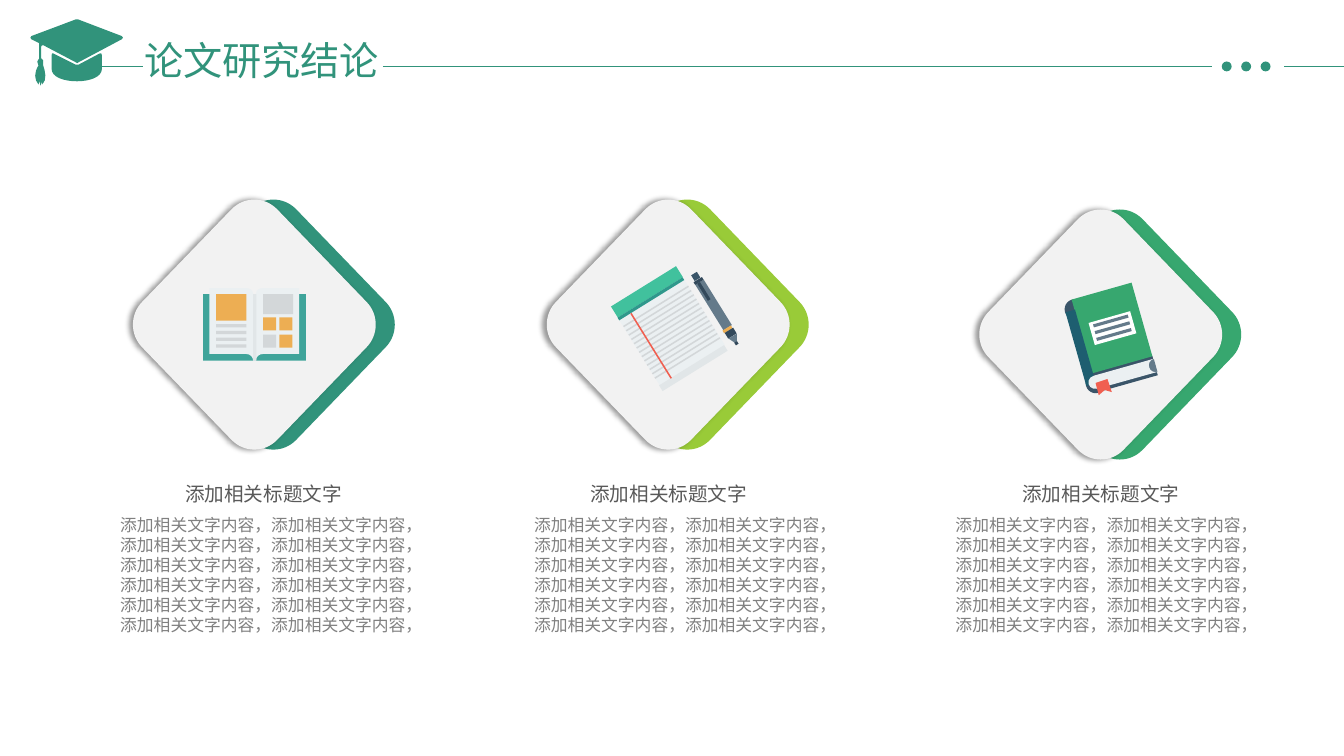
from lxml import etree
from pptx import Presentation
from pptx import util as u
from pptx.dml.color import RGBColor
from pptx.enum import shapes as kinds, text
from pptx.oxml.ns import qn

GREEN = "31937B"
PAPER, RULE, GOLD, SLATE, NAVY, RED = "EBF0F2", "D3D7D9", "EDAE53", "647A8A", "33495B", "F05F50"
BODY_LINE = "添加相关文字内容，添加相关文字内容，"


def colour(value):
    return RGBColor.from_string(value)


def paint(shape, fill):
    shape.shadow.inherit = False
    shape.fill.solid()
    shape.fill.fore_color.rgb = colour(fill)
    shape.line.fill.background()
    return shape


def add_block(shapes, box, fill, rotation=0, kind=kinds.MSO_SHAPE.RECTANGLE):
    shape = paint(shapes.add_shape(kind, *map(u.Cm, box)), fill)
    shape.rotation = rotation


def add_disc(shapes, left, top, size, fill, rotation=0):
    add_block(shapes, (left, top, size, size), fill, rotation, kinds.MSO_SHAPE.OVAL)


def bend_segments(shape, steps):
    """Turn the straight segment of each six-number step into a cubic Bezier."""
    outline = shape._element.spPr.find(".//" + qn("a:path"))
    segments = [node for node in outline if node.tag != qn("a:close")]
    for segment, step in zip(segments, steps):
        if len(step) == 6:
            segment.tag = qn("a:cubicBezTo")
            for position, (x, y) in enumerate((step[:2], step[2:4])):
                point = etree.Element(qn("a:pt"), x=str(u.Cm(x) - shape.left),
                                      y=str(u.Cm(y) - shape.top))
                segment.insert(position, point)


def add_outline(shapes, fill, *contours):
    """Draw closed contours; a step of two numbers is a point, of six a curve."""
    builder = None
    for contour in contours:
        first, *rest = [(u.Cm(step[-2]), u.Cm(step[-1])) for step in contour]
        if builder is None:
            builder = shapes.build_freeform(*first)
        else:
            builder.move_to(*first)
        builder.add_line_segments(rest, close=True)
    shape = paint(builder.convert_to_shape(), fill)
    bend_segments(shape, [step for contour in contours for step in contour])
    return shape


def add_left_shadow(shape):
    effects = shape._element.spPr.find(qn("a:effectLst"))
    shadow = etree.SubElement(effects, qn("a:outerShdw"), blurRad=str(u.Pt(4)),
                              dist=str(u.Pt(3)), dir="10800000", algn="r", rotWithShape="0")
    black = etree.SubElement(shadow, qn("a:srgbClr"), val="000000")
    etree.SubElement(black, qn("a:alpha"), val="40000")


def add_diamond(shapes, x, y, fill):
    steps = [
        (0, -3.15), (0.21, -3.15, 0.41, -3.07, 0.57, -2.91),
        (2.82, -0.58), (2.98, -0.42, 3.06, -0.21, 3.06, 0),
        (3.06, 0.21, 2.98, 0.42, 2.82, 0.58),
        (0.57, 2.91), (0.41, 3.07, 0.21, 3.15, 0, 3.15),
        (-0.21, 3.15, -0.41, 3.07, -0.57, 2.91),
        (-2.82, 0.58), (-2.98, 0.42, -3.06, 0.21, -3.06, 0),
        (-3.06, -0.21, -2.98, -0.42, -2.82, -0.58),
        (-0.57, -2.91), (-0.41, -3.07, -0.21, -3.15, 0, -3.15),
    ]
    moved = [tuple(n + (y if i % 2 else x) for i, n in enumerate(step)) for step in steps]
    return add_outline(shapes, fill, moved)


def add_text(shapes, box, lines, size, font, fill, centred=False, spacing=None, inset=0):
    frame = shapes.add_textbox(*map(u.Cm, box)).text_frame
    frame.word_wrap = False
    frame.auto_size = text.MSO_AUTO_SIZE.SHAPE_TO_FIT_TEXT
    frame.margin_left = frame.margin_right = u.Cm(inset)
    frame.margin_top = frame.margin_bottom = u.Cm(inset / 2)
    frame.text = "\n".join(lines)
    for paragraph in frame.paragraphs:
        paragraph.font.size = u.Pt(size)
        paragraph.font.name = font
        paragraph.font.color.rgb = colour(fill)
        if centred:
            paragraph.alignment = text.PP_ALIGN.CENTER
        if spacing:
            paragraph.line_spacing = spacing


def add_line(shapes, start, end, y):
    line = shapes.add_connector(kinds.MSO_CONNECTOR.STRAIGHT, *map(u.Cm, (start, y, end, y)))
    line.line.color.rgb = colour(GREEN)
    line.line.width = u.Pt(0.5)
    etree.SubElement(line._element.spPr, qn("a:effectLst"))


def draw_open_book(shapes):
    add_block(shapes, (5.12, 7.41, 2.59, 1.68), "3FA49A")
    add_outline(shapes, PAPER, [
        (6.63, 7.26), (6.53, 7.26, 6.45, 7.31, 6.45, 7.42), (6.38, 7.42),
        (6.38, 7.31, 6.3, 7.26, 6.2, 7.26), (5.28, 7.26), (5.28, 8.92),
        (7.54, 8.92), (7.54, 7.26)])
    add_outline(shapes, PAPER, [
        (6.63, 8.92), (6.2, 8.92), (6.3, 8.92, 6.38, 8.99, 6.38, 9.09),
        (6.45, 9.09), (6.45, 8.99, 6.53, 8.92, 6.63, 8.92)])
    for index, fill in enumerate((GOLD, GOLD, RULE, GOLD)):
        row, column = divmod(index, 2)
        add_block(shapes, (6.63 + 0.41 * column, 8 + 0.43 * row, 0.33, 0.33), fill)
    for row in range(4):
        add_block(shapes, (5.45, 8.17 + 0.17 * row, 0.76, 0.08), RULE)
    add_block(shapes, (6.63, 7.41, 0.76, 0.51), RULE)
    add_block(shapes, (5.45, 7.41, 0.76, 0.67), GOLD)
    add_block(shapes, (6.38, 7.41, 0.08, 1.68), "E1E6E8")


def draw_notepad(shapes):
    tilt = 328.2
    sheet = [
        ((15.95, 7.34, 1.93, 2.01), PAPER), ((16.51, 9.19, 1.93, 0.17), "E1E6E8"),
        ((15.34, 7.19, 1.93, 0.33), "41C19D"), ((15.44, 7.49, 1.93, 0.08), "2F988C"),
    ]
    rules = [((15.57 + 0.79 * i / 12, 7.7 + 1.3 * i / 12, 1.93, 0.04), RULE) for i in range(13)]
    pen = [
        ((16.39, 7.75, 0.04, 1.93), RED), ((17.86, 7.01, 0.25, 1.35), SLATE),
        ((17.48, 7.04, 0.25, 0.08), NAVY), ((17.45, 6.88, 0.17, 0.17), "3A5569"),
        ((18.21, 8.26, 0.25, 0.08), GOLD), ((18.29, 8.31, 0.25, 0.17), NAVY),
    ]
    for box, fill in sheet + rules + pen:
        add_block(shapes, box, fill, tilt)
    add_outline(shapes, SLATE, [(18.57, 8.59), (18.52, 8.64), (18.36, 8.53), (18.57, 8.41)])
    add_block(shapes, (18.52, 8.61, 0.08, 0.08), NAVY, tilt)
    add_block(shapes, (17.7, 7.09, 0.08, 0.51), NAVY, tilt)


def draw_closed_book(shapes):
    tilt = 344.2
    add_block(shapes, (27.57, 9.17, 1.57, 0.51), "3A5569", tilt)
    add_disc(shapes, 26.83, 7.54, 0.51, "3A5569", tilt)
    add_disc(shapes, 27.36, 9.4, 0.51, "3A5569", tilt)
    add_block(shapes, (27.24, 7.3, 1.57, 1.93), "37A76F", tilt)
    add_block(shapes, (27.11, 7.8, 0.25, 1.93), "1E5E70", tilt)
    add_disc(shapes, 27.43, 9.47, 0.33, PAPER, tilt)
    add_block(shapes, (28.96, 9.07, 0.17, 0.33), SLATE, tilt)
    add_outline(shapes, PAPER, [
        (28.96, 9.25), (28.93, 9.17, 28.98, 9.07, 29.08, 9.04), (27.56, 9.47),
        (27.64, 9.8), (29.18, 9.37), (29.08, 9.4, 28.98, 9.35, 28.96, 9.25)])
    add_outline(shapes, RED, [
        (28.02, 9.88), (27.84, 9.83), (27.69, 9.96), (27.61, 9.65), (27.91, 9.55)])
    add_block(shapes, (27.49, 7.98, 1.09, 0.58), "FFFFFF", tilt)
    for row in range(3):
        add_block(shapes, (27.54 + 0.04 * row, 8.05 + 0.17 * row, 0.91, 0.08), SLATE, tilt)


def draw_graduation_cap(shapes):
    base = [
        (1.3, 1.4), (1.3, 1.73), (1.3, 1.95, 1.62, 2.05, 1.94, 2.05),
        (2.25, 2.05, 2.57, 1.95, 2.57, 1.73), (2.57, 1.4),
        (2.57, 1.35, 2.54, 1.32, 2.51, 1.35), (1.98, 1.63),
        (1.96, 1.65, 1.93, 1.65, 1.91, 1.63), (1.35, 1.35),
        (1.32, 1.32, 1.3, 1.35, 1.3, 1.4)]
    board_and_tassel = [
        (1.04, 1.17), (1.04, 1.47), (1.09, 1.52), (1.09, 1.65),
        (1.14, 1.8, 1.19, 2, 1.07, 2.13), (1.06, 2.06), (1.02, 2.16), (1, 2.04),
        (0.97, 2.13), (0.86, 2, 0.86, 1.83, 0.97, 1.65), (0.94, 1.55), (0.99, 1.47),
        (0.99, 1.09), (0.79, 0.99), (0.76, 0.99, 0.76, 0.91, 0.79, 0.91), (1.91, 0.49),
        (1.93, 0.48, 1.95, 0.48, 1.97, 0.49), (3.07, 0.91),
        (3.11, 0.91, 3.11, 0.99, 3.07, 0.99), (1.98, 1.57),
        (1.96, 1.6, 1.93, 1.6, 1.91, 1.57), (1.09, 1.14), (1.07, 1.14, 1.04, 1.15, 1.04, 1.17)]
    add_outline(shapes, GREEN, base, board_and_tassel)


def add_header(slide):
    draw_graduation_cap(slide.shapes)
    add_text(slide.shapes, (3.38, 0.43, 6.5, 1.68), ["论文研究结论"], 28,
             "Noto Sans CJK SC", GREEN, spacing=1.3, inset=0.25)
    shapes = slide.shapes.add_group_shape().shapes
    for start, end in ((9.65, 30.54), (1.4, 3.61), (32.36, 33.87)):
        add_line(shapes, start, end, 1.68)
    for index in range(3):
        add_disc(shapes, 30.79 + 0.49 * index, 1.55, 0.25, GREEN)


def add_column(slide, body_left, title_left, x, y, accent, draw_icon):
    words = slide.shapes.add_group_shape().shapes
    add_text(words, (body_left, 12.96, 7.7, 3.07), [BODY_LINE] * 6, 12, "Arial", "808080")
    add_text(words, (title_left, 12.14, 3.99, 0.61), ["添加相关标题文字"], 14,
             "Arial", "595959", centred=True)
    badge = slide.shapes.add_group_shape().shapes
    add_diamond(badge, x + 0.48, y, accent)
    add_left_shadow(add_diamond(badge, x, y, "F2F2F2"))
    draw_icon(badge)


def main():
    presentation = Presentation()
    presentation.slide_width, presentation.slide_height = u.Cm(33.87), u.Cm(19.05)
    slide = presentation.slides.add_slide(presentation.slide_layouts[6])
    add_column(slide, 3.03, 4.65, 6.41, 8.18, GREEN, draw_open_book)
    add_column(slide, 13.46, 14.86, 16.84, 8.18, "99CB38", draw_notepad)
    add_column(slide, 24.08, 25.75, 27.74, 8.43, "37A76F", draw_closed_book)
    add_header(slide)
    presentation.save("out.pptx")


if __name__ == "__main__":
    main()
